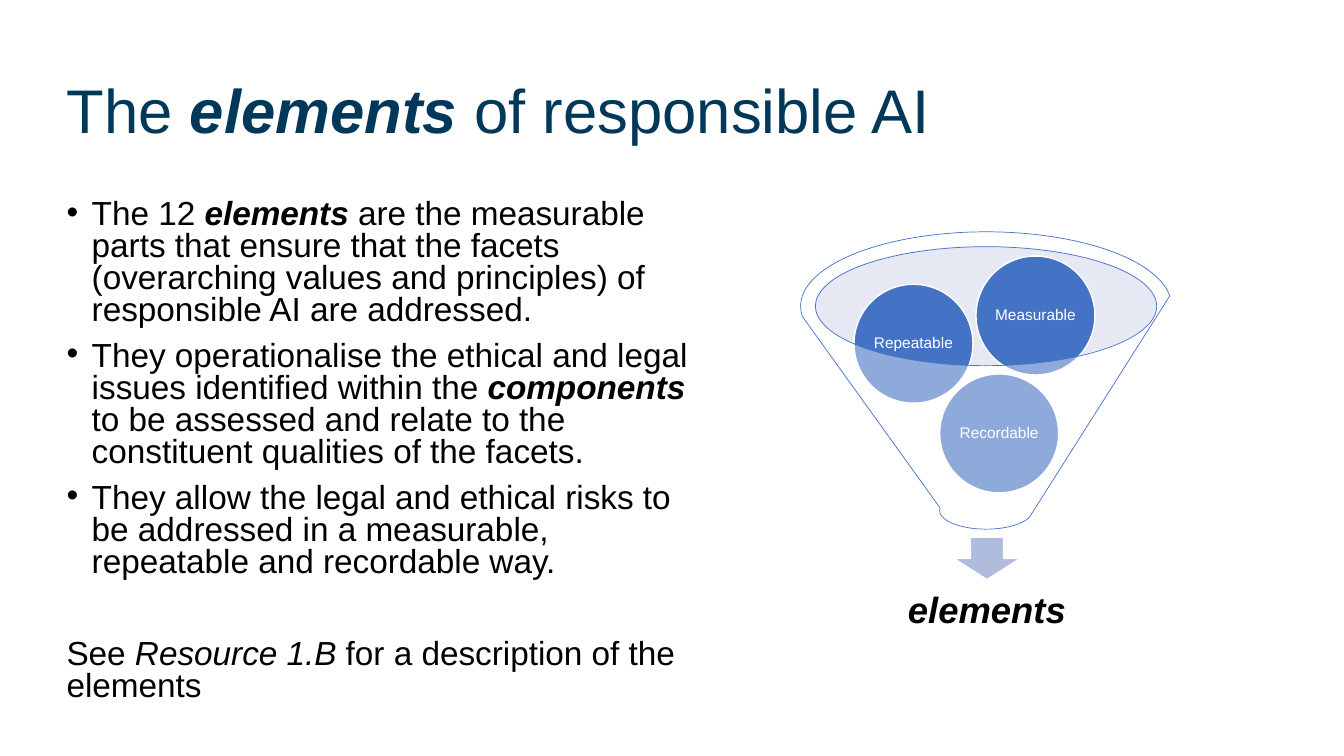
from lxml import etree
from pptx import Presentation
from pptx.dml.color import RGBColor
from pptx.enum.shapes import MSO_SHAPE
from pptx.enum.text import MSO_ANCHOR, MSO_AUTO_SIZE, PP_ALIGN
from pptx.oxml.ns import qn
from pptx.util import Inches, Pt

NAVY = RGBColor(0x00, 0x38, 0x5A)
BLUE = RGBColor(0x44, 0x72, 0xC4)
RIM = RGBColor(0xC1, 0xC9, 0xE4)
ARROW = RGBColor(0xB0, 0xBC, 0xDE)
BLACK = RGBColor(0, 0, 0)
WHITE = RGBColor(255, 255, 255)

BALL = 1.18      # diameter of a ball in the funnel
AXIS = 9.79      # vertical centre line of the funnel


def write(paragraph, text, size, color, spacing=0.9, align=PP_ALIGN.LEFT):
    """Fill a paragraph; **x** is bold italic and __x__ is italic."""
    paragraph.alignment = align
    paragraph.line_spacing = spacing
    for i, strong in enumerate(text.split("**")):
        for j, piece in enumerate(strong.split("__")):
            if piece:
                run = paragraph.add_run()
                run.text = piece
                run.font.name, run.font.size = "Arial", Pt(size)
                run.font.color.rgb = color
                run.font.bold = i % 2 == 1
                run.font.italic = i % 2 == 1 or j % 2 == 1


def draw(kind, left, top, width, height, fill, line=None, weight=1, alpha=None):
    shape = slide.shapes.add_shape(
        kind, Inches(left), Inches(top), Inches(width), Inches(height))
    shape.shadow.inherit = False
    shape.fill.solid()
    shape.fill.fore_color.rgb = fill
    if line is None:
        shape.line.fill.background()
    else:
        shape.line.color.rgb = line
        shape.line.width = Pt(weight)
    if alpha:
        color = shape.fill._xPr.find(qn("a:solidFill"))[0]
        etree.SubElement(color, qn("a:alpha")).set("val", str(alpha * 1000))
    return shape


deck = Presentation()
deck.slide_width, deck.slide_height = Inches(13.33), Inches(7.5)
slide = deck.slides.add_slide(deck.slide_layouts[1])

# Title and body placeholders
title, body = slide.placeholders
for holder, top, width, height, anchor in [
        (title, 0.4, 11.5, 1.45, MSO_ANCHOR.MIDDLE),
        (body, 1.93, 6.6, 5.17, MSO_ANCHOR.TOP)]:
    holder.left, holder.top = Inches(0.56), Inches(top)
    holder.width, holder.height = Inches(width), Inches(height)
    holder.text_frame.word_wrap = True
    holder.text_frame.auto_size = MSO_AUTO_SIZE.NONE
    holder.text_frame.vertical_anchor = anchor

write(title.text_frame.paragraphs[0],
      "The **elements** of responsible AI", 44, NAVY)

# Bulleted points, then the closing reference: text, bullet, space before
points = [
    ("The 12 **elements** are the measurable parts that ensure that the facets "
     "(overarching values and principles) of responsible AI are addressed.", True, 0),
    ("They operationalise the ethical and legal issues identified within the "
     "**components** to be assessed and relate to the constituent qualities "
     "of the facets.", True, 10),
    ("They allow the legal and ethical risks to be addressed in a measurable, "
     "repeatable and recordable way.", True, 10),
    ("See __Resource 1.B__ for a description of the elements", False, 43),
]
for index, (text, bulleted, before) in enumerate(points):
    frame = body.text_frame
    point = frame.add_paragraph() if index else frame.paragraphs[0]
    point.space_before = Pt(before)
    write(point, text, 23.8, BLACK, spacing=0.8)
    props = point._p.get_or_add_pPr()
    indent = Inches(0.25) if bulleted else 0
    props.set("marL", str(indent))
    props.set("indent", str(-indent))
    if bulleted:
        etree.SubElement(props, qn("a:buFont")).set("typeface", "Arial")
        etree.SubElement(props, qn("a:buChar")).set("char", "•")
    else:
        etree.SubElement(props, qn("a:buNone"))

# Funnel rim and outlet arrow
draw(MSO_SHAPE.OVAL, 8.08, 2.44, 3.39, 1.18, RIM, alpha=40)
draw(MSO_SHAPE.DOWN_ARROW, AXIS - 0.33, 5.33, 0.66, 0.42, ARROW, line=WHITE)

# Result below the arrow
result = slide.shapes.add_textbox(
    Inches(AXIS - 1.58), Inches(5.67), Inches(3.16), Inches(0.79)).text_frame
result.word_wrap = True
result.vertical_anchor = MSO_ANCHOR.MIDDLE
write(result.paragraphs[0], "**elements**", 26, BLACK, align=PP_ALIGN.CENTER)

# Balls falling into the funnel, each with a one-line label
for quality, left, top in [("Recordable", 9.32, 3.71),
                           ("Repeatable", 8.47, 2.82),
                           ("Measurable", 9.68, 2.54)]:
    ball = draw(MSO_SHAPE.OVAL, left, top, BALL, BALL, BLUE, line=WHITE)
    label = ball.text_frame
    label.margin_left = label.margin_right = 0
    label.margin_top = label.margin_bottom = 0
    label.word_wrap = False
    label.vertical_anchor = MSO_ANCHOR.MIDDLE
    write(label.paragraphs[0], quality, 11, WHITE, align=PP_ALIGN.CENTER)

# Translucent funnel over the balls
draw(MSO_SHAPE.FUNNEL, AXIS - 1.85, 2.3, 3.68, 2.95, WHITE,
     line=BLUE, weight=0.5, alpha=40)

deck.save("out.pptx")
